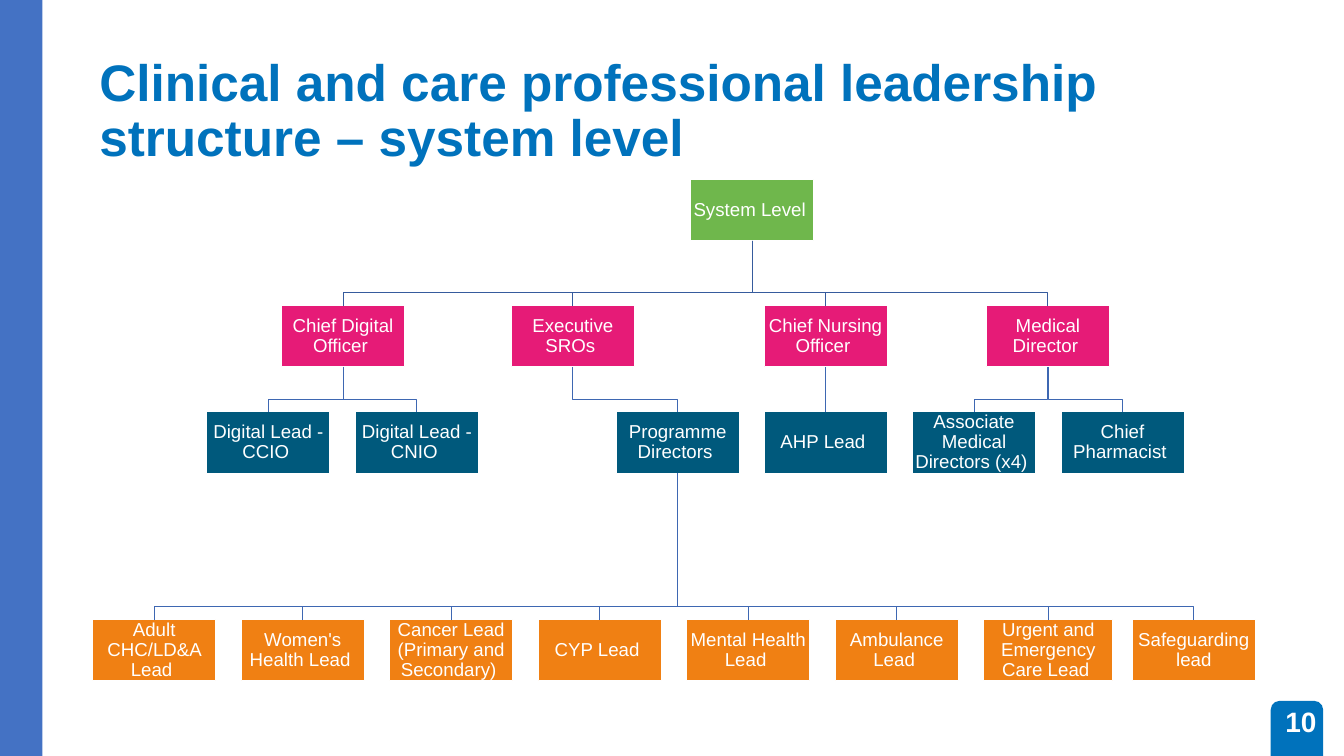
from dataclasses import dataclass, field

import pptx
import pptx.dml.color
import pptx.enum.shapes
import pptx.enum.text
import pptx.util
from lxml import etree
from pptx.util import Inches

FONT = "Arial"
WHITE = "FFFFFF"
BLUE = "0072BC"
BOX_WIDTH = 1.83
BOX_HEIGHT = 0.91
COLUMN_STEP = 2.21
BEND_HEIGHT = 0.19
RECTANGLE = pptx.enum.shapes.MSO_SHAPE.RECTANGLE
ROUNDED = pptx.enum.shapes.MSO_SHAPE.ROUNDED_RECTANGLE
ALIGN = pptx.enum.text.PP_ALIGN


@dataclass
class Tier:
    top: float
    fill: str
    line: str = "3E67B2"


@dataclass
class Role:
    title: str
    left: float
    children: list["Role"] = field(default_factory=list)
    width: float = BOX_WIDTH

    @property
    def center(self) -> float:
        return self.left + self.width / 2


TIERS = [
    Tier(2.67, "6FB74C"),
    Tier(4.55, "E61B77", "365B9D"),
    Tier(6.13, "00597C"),
    Tier(9.22, "F08013"),
]

LEAD_TITLES = [
    "Adult CHC/LD&A Lead ",
    "Women's Health Lead ",
    "Cancer Lead (Primary and Secondary) ",
    "CYP Lead ",
    "Mental Health Lead ",
    "Ambulance Lead ",
    "Urgent and Emergency Care Lead ",
    "Safeguarding lead",
]
LEADS = [Role(title, 1.38 + COLUMN_STEP * i) for i, title in enumerate(LEAD_TITLES)]
LEADS[6].width = 1.92

SYSTEM = Role("System Level ", 10.28, [
    Role("Chief Digital Officer ", 4.19, [
        Role("Digital Lead - CCIO ", 3.08),
        Role("Digital Lead - CNIO ", 5.29),
    ]),
    Role("Executive SROs ", 7.61, [
        Role("Programme Directors ", 9.17, LEADS),
    ]),
    Role("Chief Nursing Officer ", 11.37, [
        Role("AHP Lead ", 11.37),
    ]),
    Role("Medical Director ", 14.68, [
        Role("Associate Medical Directors (x4) ", 13.58),
        Role("Chief Pharmacist ", 15.79),
    ]),
])


def rgb(value: str) -> pptx.dml.color.RGBColor:
    return pptx.dml.color.RGBColor.from_string(value)


def write(shape, text: str, size: float, color: str, align, bold: bool = False,
          spacing: float = 1.0, inset: float | None = None) -> None:
    frame = shape.text_frame
    frame.word_wrap = True
    frame.vertical_anchor = pptx.enum.text.MSO_ANCHOR.MIDDLE
    if inset is not None:
        frame.margin_left = frame.margin_right = Inches(inset)
        frame.margin_top = frame.margin_bottom = Inches(inset)
    para = frame.paragraphs[0]
    para.text = text
    para.alignment = align
    para.line_spacing = spacing
    para.font.name = FONT
    para.font.size = pptx.util.Pt(size)
    para.font.bold = bold
    para.font.color.rgb = rgb(color)


def add_block(page, kind, left: float, top: float, width: float, height: float,
              fill: str, line: str | None = None):
    block = page.shapes.add_shape(
        kind, Inches(left), Inches(top), Inches(width), Inches(height))
    block.shadow.inherit = False
    block.fill.solid()
    block.fill.fore_color.rgb = rgb(fill)
    if line:
        block.line.color.rgb = rgb(line)
        block.line.width = pptx.util.Pt(1)
    else:
        block.line.fill.background()
    return block


def add_text(page, left: float, top: float, width: float, height: float,
             text: str, size: float, color: str, align, spacing: float = 1.0) -> None:
    box = page.shapes.add_textbox(
        Inches(left), Inches(top), Inches(width), Inches(height))
    write(box, text, size, color, align, bold=True, spacing=spacing)


def link(page, parent: Role, child: Role, parent_box, child_box, depth: int) -> None:
    """Join a parent's bottom to a child's top, bending just above the child."""
    if parent.center == child.center:
        line = page.shapes.add_connector(
            pptx.enum.shapes.MSO_CONNECTOR.STRAIGHT, 0, 0, 0, 0)
        line.begin_connect(parent_box, 2)
        line.end_connect(child_box, 0)
        etree.SubElement(line._element.spPr, pptx.oxml.ns.qn("a:effectLst"))
    else:
        start = TIERS[depth].top + BOX_HEIGHT
        end = TIERS[depth + 1].top
        bend = end - BEND_HEIGHT
        builder = page.shapes.build_freeform(
            Inches(parent.center), Inches(start))
        corners = [(parent.center, bend), (child.center, bend), (child.center, end)]
        builder.add_line_segments(
            [(Inches(x), Inches(y)) for x, y in corners], close=False)
        line = builder.convert_to_shape()
        line.shadow.inherit = False
        line.fill.background()
    line.line.color.rgb = rgb(TIERS[depth + 1].line)
    line.line.width = pptx.util.Pt(1)


def add_branch(page, role: Role, depth: int = 0):
    """Draw a role with everything below it and return the role's box."""
    tier = TIERS[depth]
    box = add_block(page, RECTANGLE, role.left, tier.top, role.width, BOX_HEIGHT,
                    tier.fill, WHITE)
    write(box, role.title, 20, WHITE, ALIGN.CENTER, spacing=0.9, inset=0.01)
    for child in role.children:
        child_box = add_branch(page, child, depth + 1)
        link(page, role, child, box, child_box, depth)
    return box


def main() -> None:
    deck = pptx.Presentation()
    deck.slide_width = Inches(20)
    deck.slide_height = Inches(11.25)
    page = deck.slides.add_slide(deck.slide_layouts[6])

    add_block(page, ROUNDED, 18.91, 10.43, 0.78, 1.12, BLUE)
    add_block(page, RECTANGLE, -0.1, -0.12, 0.73, 11.76, "4472C4")
    add_text(page, 1.38, 0.88, 15.35, 1.59,
             "Clinical and care professional leadership structure – system level",
             55, BLUE, ALIGN.LEFT, spacing=0.9)
    add_text(page, 15.19, 10.43, 4.5, 0.6, "10", 30, WHITE, ALIGN.RIGHT)
    add_branch(page, SYSTEM)

    deck.save("out.pptx")


if __name__ == "__main__":
    main()
